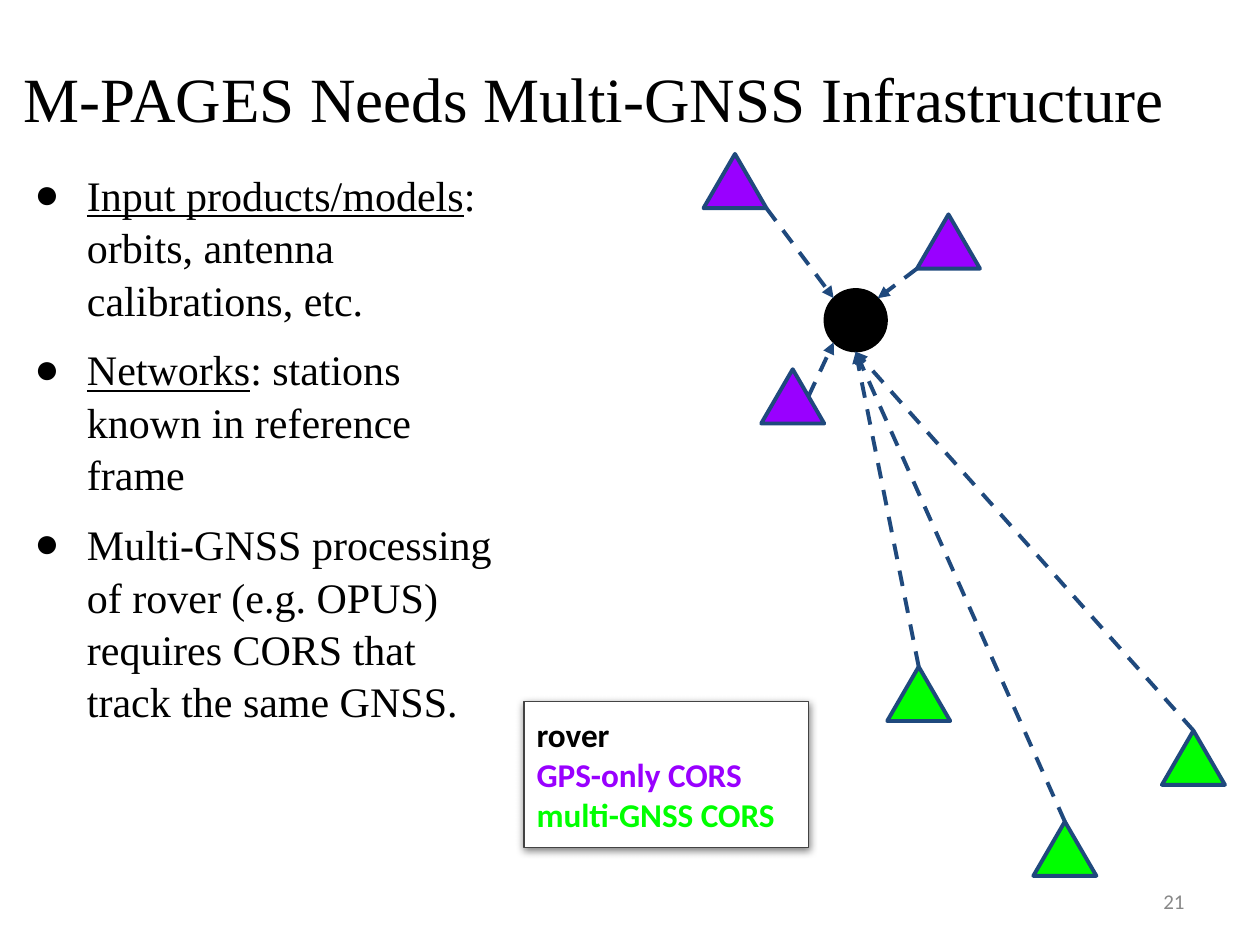
from lxml.etree import SubElement
from pptx import Presentation
from pptx.dml.color import RGBColor
from pptx.enum.dml import MSO_LINE_DASH_STYLE as Dash
from pptx.enum.shapes import MSO_CONNECTOR as Connector, MSO_SHAPE as Shape
from pptx.enum.text import MSO_ANCHOR as Anchor, MSO_AUTO_SIZE as AutoSize, PP_ALIGN as Align
from pptx.oxml.ns import qn
from pptx.util import Pt

BLACK = RGBColor(0x00, 0x00, 0x00)
WHITE = RGBColor(0xFF, 0xFF, 0xFF)
NAVY = RGBColor(0x1F, 0x49, 0x7D)
PURPLE = RGBColor(0x99, 0x00, 0xFF)
GREEN = RGBColor(0x00, 0xFF, 0x00)
CHARCOAL = RGBColor(0x43, 0x43, 0x43)
GRAY = RGBColor(0x88, 0x88, 0x88)

SERIF, SANS = "Times New Roman", "Calibri"
STATION_WIDTH, STATION_HEIGHT = 36, 31
ROVER_LEFT, ROVER_TOP, ROVER_SIZE = 471, 165, 36


def add_xml(parent, tag, **attributes):
    return SubElement(parent, qn(tag), {key: str(value) for key, value in attributes.items()})


class SlideBuilder:
    title_style = {"name": SERIF, "size": Pt(36)}
    body_style = {"name": SERIF, "size": Pt(24)}
    legend_style = {"name": SANS, "size": Pt(19), "bold": True}
    number_style = {"name": SANS, "size": Pt(12)}

    def __init__(self, slide):
        self.slide = slide

    def add_text(self, paragraph, text, style, color=BLACK, **extra):
        run = paragraph.add_run()
        run.text = text
        for key, value in {**style, **extra}.items():
            setattr(run.font, key, value)
        run.font.color.rgb = color

    def place(self, shape, *box):
        for key, value in zip(("left", "top", "width", "height"), box):
            setattr(shape, key, Pt(value))

    def frame(self, shape, anchor=Anchor.TOP, **margins):
        settings = {"word_wrap": True, "auto_size": AutoSize.NONE, "vertical_anchor": anchor}
        for key, value in {**settings, **margins}.items():
            setattr(shape.text_frame, key, value)
        return shape.text_frame

    def title(self, text, *box):
        heading = self.slide.shapes.title
        self.place(heading, *box)
        paragraph = self.frame(heading).paragraphs[0]
        paragraph.alignment = Align.LEFT
        paragraph.line_spacing = 1.1
        self.add_text(paragraph, text, self.title_style)

    def bullets(self, items, *box):
        body = self.slide.placeholders[1]
        self.place(body, *box)
        frame = self.frame(body)
        for index, (lead, rest) in enumerate(items):
            paragraph = frame.add_paragraph() if index else frame.paragraphs[0]
            properties = paragraph._p.get_or_add_pPr()
            properties.set("marL", str(Pt(36)))
            properties.set("indent", str(-Pt(30)))
            add_xml(add_xml(properties, "a:buClr"), "a:srgbClr", val=BLACK)
            add_xml(properties, "a:buFont", typeface=SERIF)
            add_xml(properties, "a:buChar", char="●")
            paragraph.space_before = Pt(10 if index else 0)
            paragraph.line_spacing = 1.04
            if lead:
                self.add_text(paragraph, lead, self.body_style, underline=True)
            self.add_text(paragraph, rest, self.body_style)

    def shape(self, kind, box, fill, line, weight):
        item = self.slide.shapes.add_shape(kind, *map(Pt, box))
        item.shadow.inherit = False
        item.fill.solid()
        item.fill.fore_color.rgb = fill
        item.line.color.rgb = line
        item.line.width = Pt(weight)
        return item

    def station(self, left, top, color):
        box = (left, top, STATION_WIDTH, STATION_HEIGHT)
        return self.shape(Shape.ISOSCELES_TRIANGLE, box, color, NAVY, 2.25)

    def arrow(self, start, end):
        link = self.slide.shapes.add_connector(Connector.STRAIGHT, *map(Pt, (*start, *end)))
        link.line.color.rgb = NAVY
        link.line.width = Pt(2.25)
        link.line.dash_style = Dash.DASH
        add_xml(link.line._get_or_add_ln(), "a:tailEnd", type="triangle")
        add_xml(link._element.spPr, "a:effectLst")
        return link

    def legend(self, entries, *box):
        panel = self.shape(Shape.RECTANGLE, box, WHITE, CHARCOAL, 0.75)
        effects = panel._element.spPr.find(qn("a:effectLst"))
        shadow = add_xml(effects, "a:outerShdw", blurRad=Pt(4.5), dist=Pt(1.5),
                         dir=90 * 60000, algn="bl", rotWithShape=0)
        add_xml(add_xml(shadow, "a:srgbClr", val=BLACK), "a:alpha", val=50000)
        frame = self.frame(panel, margin_top=Pt(7.2), margin_bottom=Pt(7.2))
        for index, (text, color) in enumerate(entries):
            paragraph = frame.add_paragraph() if index else frame.paragraphs[0]
            paragraph.alignment = Align.LEFT
            self.add_text(paragraph, text, self.legend_style, color)

    def page_number(self, text, *box):
        number = self.slide.shapes.add_textbox(*map(Pt, box))
        paragraph = self.frame(number, Anchor.MIDDLE).paragraphs[0]
        paragraph.alignment = Align.RIGHT
        self.add_text(paragraph, text, self.number_style, GRAY)


def main():
    deck = Presentation()
    deck.slide_width, deck.slide_height = Pt(720), Pt(540)
    builder = SlideBuilder(deck.slides.add_slide(deck.slide_layouts[1]))

    builder.title("M-PAGES Needs Multi-GNSS Infrastructure", 6.5, 26, 707, 65.5)
    builder.bullets([
        ("Input products/models", ": orbits, antenna calibrations, etc."),
        ("Networks", ": stations known in reference frame"),
        ("", "Multi-GNSS processing of rover (e.g. OPUS) requires CORS that track the same GNSS."),
    ], 6.5, 92, 289.5, 409)
    builder.page_number("21", 516, 500.5, 168, 28.5)

    rover_box = (ROVER_LEFT, ROVER_TOP, ROVER_SIZE, ROVER_SIZE)
    builder.shape(Shape.OVAL, rover_box, BLACK, BLACK, 0.75)
    near, far = ROVER_SIZE * 0.15, ROVER_SIZE * 0.85
    upper_left = (ROVER_LEFT + near, ROVER_TOP + near)
    upper_right = (ROVER_LEFT + far, ROVER_TOP + near)
    lower_left = (ROVER_LEFT + near, ROVER_TOP + far)
    bottom = (ROVER_LEFT + ROVER_SIZE / 2, ROVER_TOP + ROVER_SIZE)

    gps_only = [
        (402, 88, 1, 1, upper_left),
        (435, 211, 0.75, 0.5, lower_left),
        (524, 122.5, 0, 1, upper_right),
    ]
    for left, top, across, down, target in gps_only:
        builder.station(left, top, PURPLE)
        start = (left + across * STATION_WIDTH, top + down * STATION_HEIGHT)
        builder.arrow(start, target)

    for left, top in [(664, 417.5), (590.5, 469.5), (507, 381)]:
        station = builder.station(left, top, GREEN)
        apex = (left + STATION_WIDTH / 2, top)
        builder.arrow(apex, bottom).begin_connect(station, 0)

    builder.legend([
        ("rover", BLACK),
        ("GPS-only CORS", PURPLE),
        ("multi-GNSS CORS", GREEN),
    ], 299.5, 401, 162.5, 83.5)

    deck.save("out.pptx")


if __name__ == "__main__":
    main()
